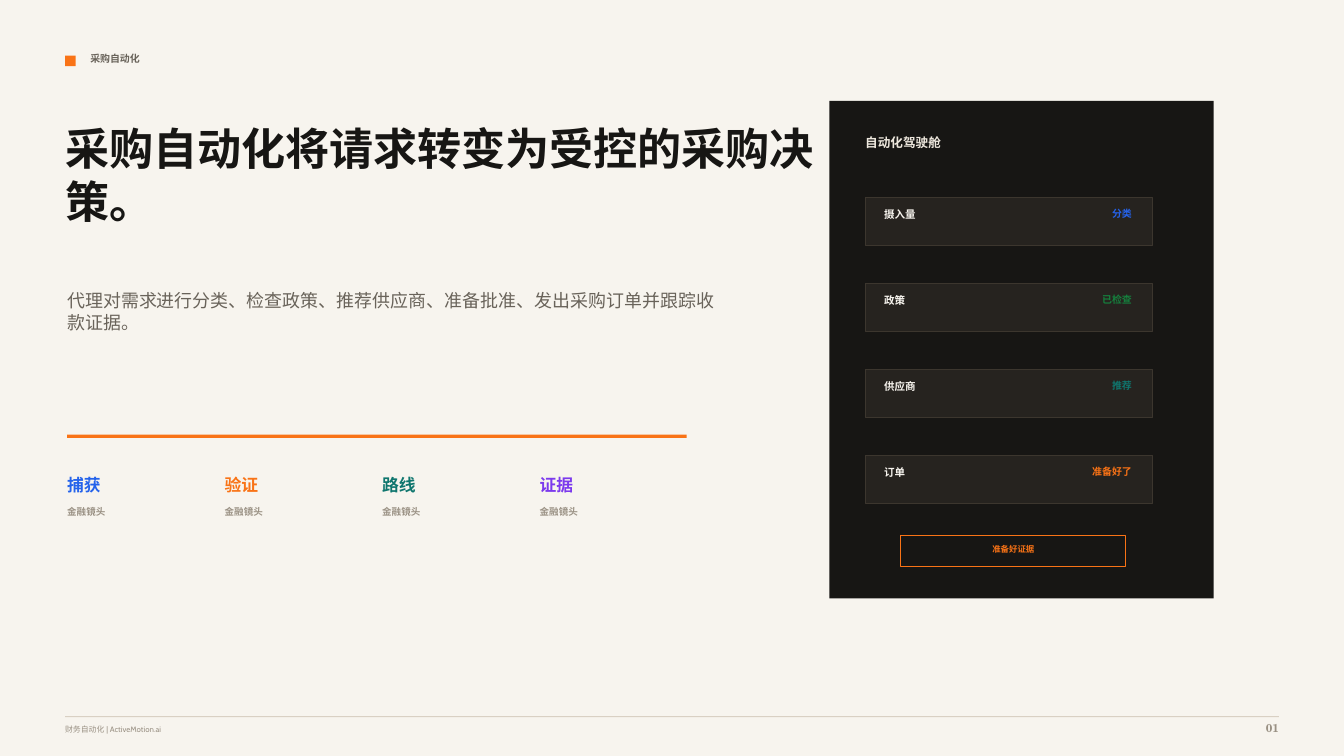
from pptx import Presentation
from pptx.dml.color import RGBColor
from pptx.enum.shapes import MSO_SHAPE
from pptx.enum.text import PP_ALIGN
from pptx.util import Pt

WIDTH, HEIGHT = 960, 540
PAPER, INK, CREAM = "F7F4EE", "171614", "EDE7DD"
GRAY, MUTED, RULE = "69635A", "9A9184", "D9D0C3"
CARD, CARD_EDGE = "26231F", "3C362E"
ORANGE, BLUE, TEAL = "F97316", "2563EB", "0F766E"
GREEN, VIOLET = "15803D", "7C3AED"
LEFT, RIGHT, CENTER = PP_ALIGN.LEFT, PP_ALIGN.RIGHT, PP_ALIGN.CENTER


def rgb(value):
    return RGBColor.from_string(value)


class Deck:
    body = "Cabin"
    display = "TeX Gyre Schola"

    def __init__(self):
        self.prs = Presentation()
        self.prs.slide_width, self.prs.slide_height = Pt(WIDTH), Pt(HEIGHT)
        self.s = self.prs.slides.add_slide(self.prs.slide_layouts[6])

    def rect(self, x, y, w, h, fill=None, line=None):
        sp = self.s.shapes.add_shape(MSO_SHAPE.RECTANGLE, Pt(x), Pt(y), Pt(w), Pt(h))
        sp.shadow.inherit = False
        if fill:
            sp.fill.solid()
            sp.fill.fore_color.rgb = rgb(fill)
        else:
            sp.fill.background()
        if line:
            sp.line.color.rgb = rgb(line)
            sp.line.width = Pt(0.75)
        else:
            sp.line.fill.background()

    def text(self, x, y, w, h, text, size, color, bold=True, font=body, align=LEFT):
        tf = self.s.shapes.add_textbox(Pt(x), Pt(y), Pt(w), Pt(h)).text_frame
        tf.margin_left = tf.margin_right = tf.margin_top = tf.margin_bottom = 0
        tf.word_wrap = True
        tf.text = text
        p = tf.paragraphs[0]
        p.alignment = align
        r = p.runs[0]
        r.font.name = font
        r.font.size = Pt(size)
        r.font.bold = bold
        r.font.color.rgb = rgb(color)


def add_intro(deck):
    deck.rect(0, 0, WIDTH, HEIGHT, PAPER)
    deck.rect(46.5, 39.75, 7.5, 7.5, ORANGE)
    deck.text(64.5, 37.5, 420, 13.5, "采购自动化", 7.1, GRAY)
    deck.text(46.5, 87, 555, 94.5, "采购自动化将请求转变为受控的采购决策。", 31.5, INK,
              font=deck.display)
    deck.text(48, 207, 465, 66,
              "代理对需求进行分类、检查政策、推荐供应商、准备批准、发出采购订单并跟踪收款证据。",
              12.8, GRAY, bold=False)
    deck.rect(48, 310.5, 442.5, 2.25, ORANGE)


def add_stages(deck):
    stages = [("捕获", BLUE), ("验证", ORANGE), ("路线", TEAL), ("证据", VIOLET)]
    for i, (stage, color) in enumerate(stages):
        x = 48 + 112.5 * i
        deck.text(x, 339, 90, 15, stage, 12, color, font=deck.display)
        deck.text(x, 361.5, 82.5, 12, "金融镜头", 6.8, MUTED)


def add_cockpit(deck):
    deck.rect(592.5, 72, 274.5, 355.5, INK)
    deck.text(618, 96, 165, 18, "自动化驾驶舱", 9, CREAM)
    rows = [("摄入量", "分类", BLUE), ("政策", "已检查", GREEN),
            ("供应商", "推荐", TEAL), ("订单", "准备好了", ORANGE)]
    for i, (label, status, color) in enumerate(rows):
        y = 141 + 61.4 * i
        deck.rect(618, y, 205.5, 34.5, CARD, CARD_EDGE)
        deck.text(631.5, y + 7.5, 97.5, 12, label, 7.5, PAPER)
        deck.text(736.5, y + 7.5, 72, 12, status, 7.1, color, align=RIGHT)
    deck.rect(643.5, 382.5, 160.5, 22.5, line=ORANGE)
    deck.text(652.5, 388.5, 142.5, 10.5, "准备好证据", 6, ORANGE, align=CENTER)


def add_footer(deck):
    deck.rect(46.5, 511.5, 867, 0.75, RULE)
    deck.text(46.5, 517.5, 570, 10.5, "财务自动化 | ActiveMotion.ai", 5.6, MUTED, bold=False)
    deck.text(877.5, 515, 36, 13.5, "01", 8.2, MUTED, font=deck.display, align=RIGHT)


def main():
    deck = Deck()
    add_intro(deck)
    add_stages(deck)
    add_cockpit(deck)
    add_footer(deck)
    deck.prs.save("out.pptx")


if __name__ == "__main__":
    main()
